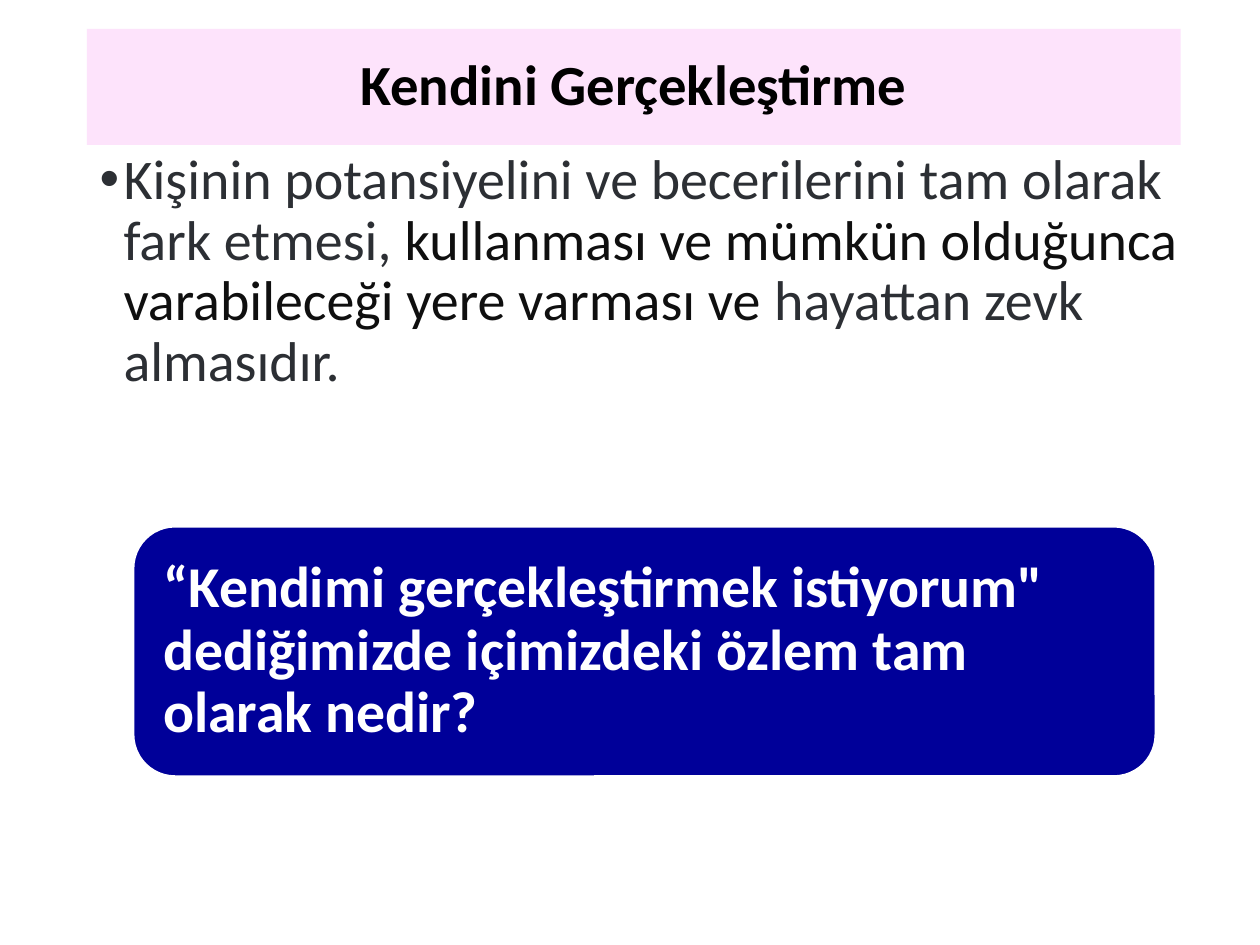
from dataclasses import dataclass

from pptx import Presentation
from pptx.dml.color import RGBColor
from pptx.enum.shapes import MSO_SHAPE
from pptx.enum.text import MSO_ANCHOR, MSO_AUTO_SIZE, PP_ALIGN
from pptx.shapes.autoshape import Shape
from pptx.util import Inches, Pt


@dataclass(frozen=True)
class Theme:
    font: str = "Calibri"
    title_fill: RGBColor = RGBColor(0xFD, 0xE3, 0xFB)
    title_text: RGBColor = RGBColor(0x00, 0x00, 0x00)
    body_text: RGBColor = RGBColor(0x2C, 0x2F, 0x34)
    body_dark: RGBColor = RGBColor(0x0F, 0x0F, 0x0F)
    quote_fill: RGBColor = RGBColor(0x00, 0x00, 0x99)
    white: RGBColor = RGBColor(0xFF, 0xFF, 0xFF)
    title_size: float = 32.4
    body_size: float = 32
    quote_size: float = 33
    line_spacing: float = 0.9


@dataclass(frozen=True)
class Area:
    left: float
    top: float
    width: float
    height: float


@dataclass(frozen=True)
class Span:
    text: str
    color: RGBColor


THEME = Theme()
TITLE_AREA = Area(0.69, 0.23, 8.68, 0.92)
BODY_AREA = Area(0.69, 1.15, 8.88, 2.76)
QUOTE_AREA = Area(1.06, 4.18, 8.11, 1.98)

TITLE = [Span("Kendini Gerçekleştirme", THEME.title_text)]
DEFINITION = [
    Span("Kişinin potansiyelini ve becerilerini tam olarak fark etmesi,", THEME.body_text),
    Span(" kullanması ve mümkün olduğunca varabileceği yere varması ve ", THEME.body_dark),
    Span("hayattan zevk almasıdır.", THEME.body_text),
]
QUOTE = [
    Span(
        "“Kendimi gerçekleştirmek istiyorum\" dediğimizde içimizdeki özlem tam olarak nedir?",
        THEME.white,
    )
]


def place(shape: Shape, area: Area) -> None:
    shape.left, shape.top = Inches(area.left), Inches(area.top)
    shape.width, shape.height = Inches(area.width), Inches(area.height)


def write(
    shape: Shape,
    spans: list[Span],
    size: float,
    bold: bool = False,
    align: PP_ALIGN = PP_ALIGN.LEFT,
    anchor: MSO_ANCHOR = MSO_ANCHOR.MIDDLE,
) -> None:
    """Fill the shape with one paragraph of coloured spans."""
    frame = shape.text_frame
    frame.word_wrap = True
    frame.auto_size = MSO_AUTO_SIZE.NONE
    frame.vertical_anchor = anchor
    para = frame.paragraphs[0]
    para.alignment = align
    para.line_spacing = THEME.line_spacing
    para.font.name = THEME.font
    para.font.size = Pt(size)
    para.font.bold = bold
    for span in spans:
        run = para.add_run()
        run.text = span.text
        run.font.color.rgb = span.color


def fill(shape: Shape, color: RGBColor) -> None:
    shape.fill.solid()
    shape.fill.fore_color.rgb = color


def main() -> None:
    deck = Presentation()
    deck.slide_width, deck.slide_height = Inches(10), Inches(7.5)
    page = deck.slides.add_slide(deck.slide_layouts[1])

    title = page.shapes.title
    place(title, TITLE_AREA)
    fill(title, THEME.title_fill)
    write(title, TITLE, THEME.title_size, bold=True, align=PP_ALIGN.CENTER)

    body = page.placeholders[1]
    place(body, BODY_AREA)
    write(body, DEFINITION, THEME.body_size, anchor=MSO_ANCHOR.TOP)
    para = body.text_frame.paragraphs[0]
    para.space_before = Pt(7.5)
    para.font.color.rgb = THEME.body_text
    properties = para._p.get_or_add_pPr()
    properties.set("marL", str(Inches(0.19)))
    properties.set("indent", str(Inches(-0.19)))

    quote = page.shapes.add_shape(MSO_SHAPE.ROUNDED_RECTANGLE, 0, 0, 0, 0)
    place(quote, QUOTE_AREA)
    quote.shadow.inherit = False
    fill(quote, THEME.quote_fill)
    quote.line.color.rgb = THEME.white
    quote.line.width = Pt(1)
    write(quote, QUOTE, THEME.quote_size, bold=True)
    frame = quote.text_frame
    frame.margin_left = frame.margin_right = Inches(0.14)
    frame.margin_top = frame.margin_bottom = Inches(0.14)

    deck.save("out.pptx")


if __name__ == "__main__":
    main()
